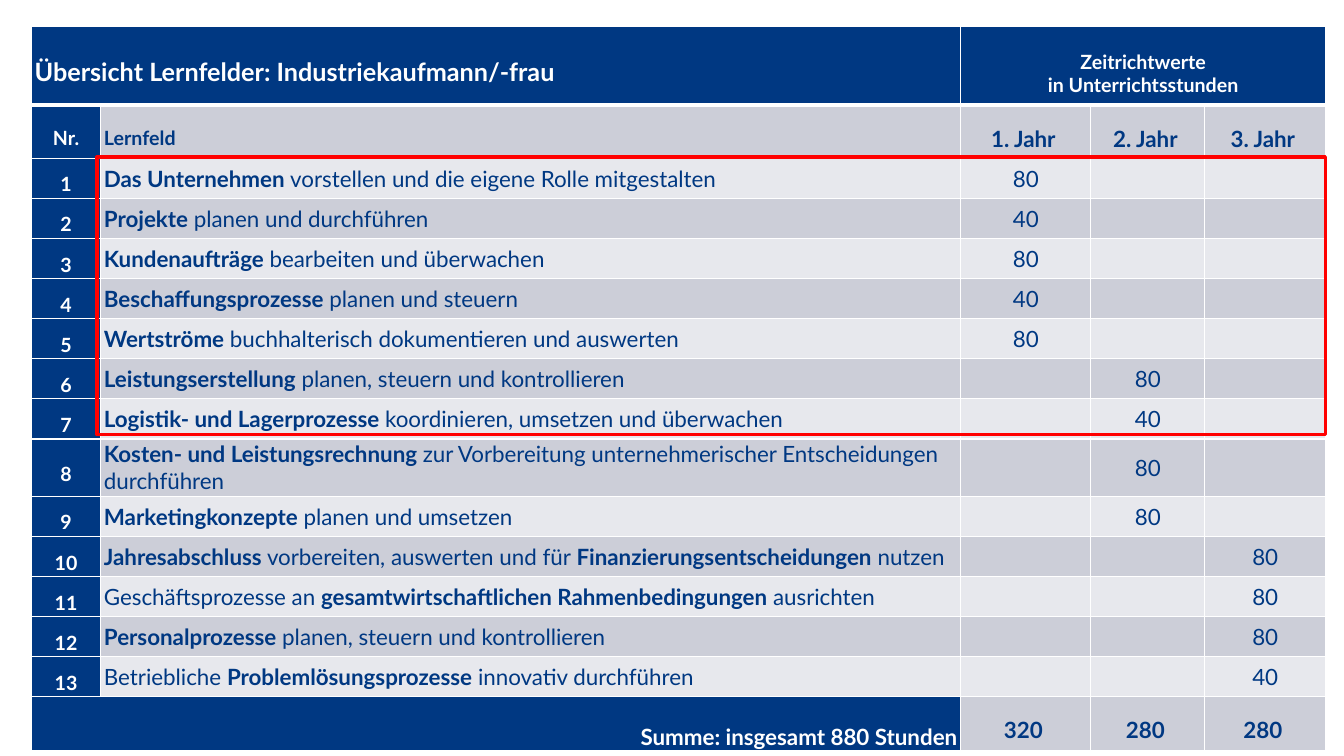
from lxml.etree import SubElement
from pptx import Presentation
from pptx.dml.color import RGBColor
from pptx.enum.shapes import MSO_SHAPE as Shape
from pptx.enum.text import MSO_ANCHOR as Anchor, PP_ALIGN as Align
from pptx.oxml.ns import qn
from pptx.util import Cm, Pt

NAVY = RGBColor(0x00, 0x38, 0x82)
GREY = RGBColor(0xCC, 0xCE, 0xD8)
PALE = RGBColor(0xE7, 0xE8, 0xED)
WHITE = RGBColor(0xFF, 0xFF, 0xFF)
RED = RGBColor(0xFF, 0x00, 0x00)

COLUMN_WIDTHS = [1.75, 21.67, 3.28, 2.87, 3.05]
HEADER_HEIGHT, YEARS_HEIGHT, ROW_HEIGHT, TALL_HEIGHT = 1.98, 1.34, 1.01, 1.45
TALL_FIELD = 8

FIELDS = [
    ("**Das Unternehmen **vorstellen und die eigene Rolle mitgestalten", 1, 80),
    ("**Projekte** planen und durchführen", 1, 40),
    ("**Kundenaufträge** bearbeiten und überwachen", 1, 80),
    ("**Beschaffungsprozesse** planen und steuern", 1, 40),
    ("**Wertströme** buchhalterisch dokumentieren und auswerten", 1, 80),
    ("**Leistungserstellung** planen, steuern und kontrollieren", 2, 80),
    ("**Logistik- und Lagerprozesse **koordinieren, umsetzen und überwachen", 2, 40),
    ("**Kosten- und Leistungsrechnung **zur Vorbereitung unternehmerischer "
     "Entscheidungen durchführen", 2, 80),
    ("**Marketingkonzepte** planen und umsetzen", 2, 80),
    ("**Jahresabschluss** vorbereiten, auswerten und für "
     "**Finanzierungsentscheidungen** nutzen", 3, 80),
    ("Geschäftsprozesse an **gesamtwirtschaftlichen Rahmenbedingungen **ausrichten", 3, 80),
    ("**Personalprozesse** planen, steuern und kontrollieren", 3, 80),
    ("Betriebliche **Problemlösungsprozesse** innovativ durchführen", 3, 40),
]


class Builder:
    font = "Lato"

    def __init__(self, page):
        self.page = page

    def table(self, left, top, widths, heights):
        frame = self.page.shapes.add_table(
            len(heights), len(widths), Cm(left), Cm(top), Cm(sum(widths)), Cm(sum(heights)))
        table = frame.table
        table.first_row = table.horz_banding = False
        for column, width in zip(table.columns, widths):
            column.width = Cm(width)
        for row, height in zip(table.rows, heights):
            row.height = Cm(height)
        return table

    def cell(self, cell, fill, bottom=1):
        layout = {"margin_left": Cm(0.08), "margin_right": Cm(0.08), "margin_top": 0,
                  "margin_bottom": 0, "vertical_anchor": Anchor.MIDDLE}
        for name, value in layout.items():
            setattr(cell, name, value)
        properties = cell._tc.get_or_add_tcPr()
        for side, width in (("lnL", 1), ("lnR", 1), ("lnT", 1), ("lnB", bottom)):
            line = SubElement(properties, qn(f"a:{side}"), w=str(Pt(width)))
            solid = SubElement(line, qn("a:solidFill"))
            SubElement(solid, qn("a:srgbClr"), val=str(WHITE))
        cell.fill.solid()
        cell.fill.fore_color.rgb = fill

    def label(self, cell, text, size=16, color=NAVY, align=Align.CENTER, spacing=1.0):
        for index, content in enumerate(text.split("\n")):
            box = cell.text_frame
            para = box.add_paragraph() if index else box.paragraphs[0]
            para.alignment = align
            para.line_spacing = spacing
            for position, part in enumerate(content.split("**")):
                if part:
                    span = para.add_run()
                    span.text = part
                    style = {"name": self.font, "size": Pt(size), "bold": position % 2 == 1}
                    for name, value in style.items():
                        setattr(span.font, name, value)
                    span.font.color.rgb = color

    def outline(self, left, top, width, height, color, weight):
        shape = self.page.shapes.add_shape(
            Shape.RECTANGLE, Cm(left), Cm(top), Cm(width), Cm(height))
        shape.shadow.inherit = False
        shape.fill.background()
        shape.line.color.rgb = color
        shape.line.width = Pt(weight)


def main():
    deck = Presentation()
    deck.slide_width, deck.slide_height = Cm(33.87), Cm(19.05)
    builder = Builder(deck.slides.add_slide(deck.slide_layouts[6]))

    field_heights = [TALL_HEIGHT if number == TALL_FIELD else ROW_HEIGHT
                     for number in range(1, len(FIELDS) + 1)]
    heights = [HEADER_HEIGHT, YEARS_HEIGHT, *field_heights, ROW_HEIGHT]
    table = builder.table(0.79, 0.67, COLUMN_WIDTHS, heights)
    last = len(heights) - 1

    for row in range(len(heights)):
        for column in range(len(COLUMN_WIDTHS)):
            navy = row == 0 or column == 0 or (row == last and column == 1)
            fill = NAVY if navy else GREY if row % 2 or row == last else PALE
            builder.cell(table.cell(row, column), fill, 3 if row == 0 else 1)

    title, hours_title, total = table.cell(0, 0), table.cell(0, 2), table.cell(last, 0)
    title.merge(table.cell(0, 1))
    hours_title.merge(table.cell(0, 4))
    total.merge(table.cell(last, 1))
    for cell, margin in ((title, 0.76), (hours_title, 0.59)):
        cell.vertical_anchor = Anchor.TOP
        cell.margin_top = Cm(margin)

    builder.label(title, "**Übersicht Lernfelder: Industriekaufmann/-frau**", 18, WHITE, Align.LEFT)
    builder.label(hours_title, "**Zeitrichtwerte**\n**in Unterrichtsstunden**", 14, WHITE)
    builder.label(table.cell(1, 0), "**Nr.**", 14, WHITE, spacing=1.5)
    builder.label(table.cell(1, 1), "**Lernfeld**", 14, align=Align.LEFT, spacing=1.5)

    for number, (field, year, hours) in enumerate(FIELDS, 1):
        row = number + 1
        builder.label(table.cell(row, 0), f"**{number}**", 14, WHITE, spacing=1.5)
        builder.label(table.cell(row, 1), field, align=Align.LEFT)
        builder.label(table.cell(row, year + 1), str(hours))

    year_sums = {year: sum(hours for _, when, hours in FIELDS if when == year)
                 for year in (1, 2, 3)}
    for year, hours in year_sums.items():
        for row, text in ((1, f"{year}. Jahr"), (last, str(hours))):
            cell = table.cell(row, year + 1)
            cell.margin_right = Cm(0.2)
            builder.label(cell, f"**{text}**", spacing=1.5)
    builder.label(total, f"**Summe: insgesamt {sum(year_sums.values())} Stunden**",
                  color=WHITE, align=Align.RIGHT, spacing=2.0)

    builder.outline(2.44, 3.96, 30.96, 6.99, RED, 2.5)
    deck.save("out.pptx")


if __name__ == "__main__":
    main()
